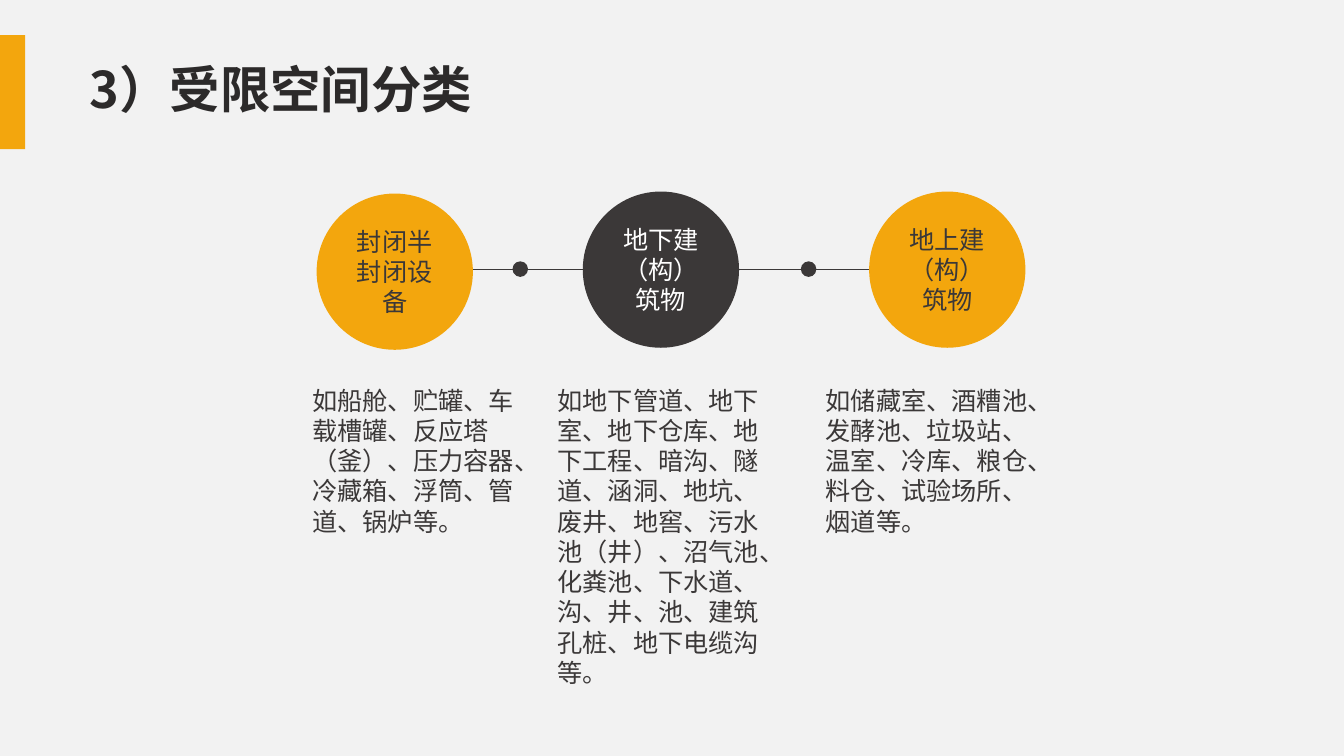
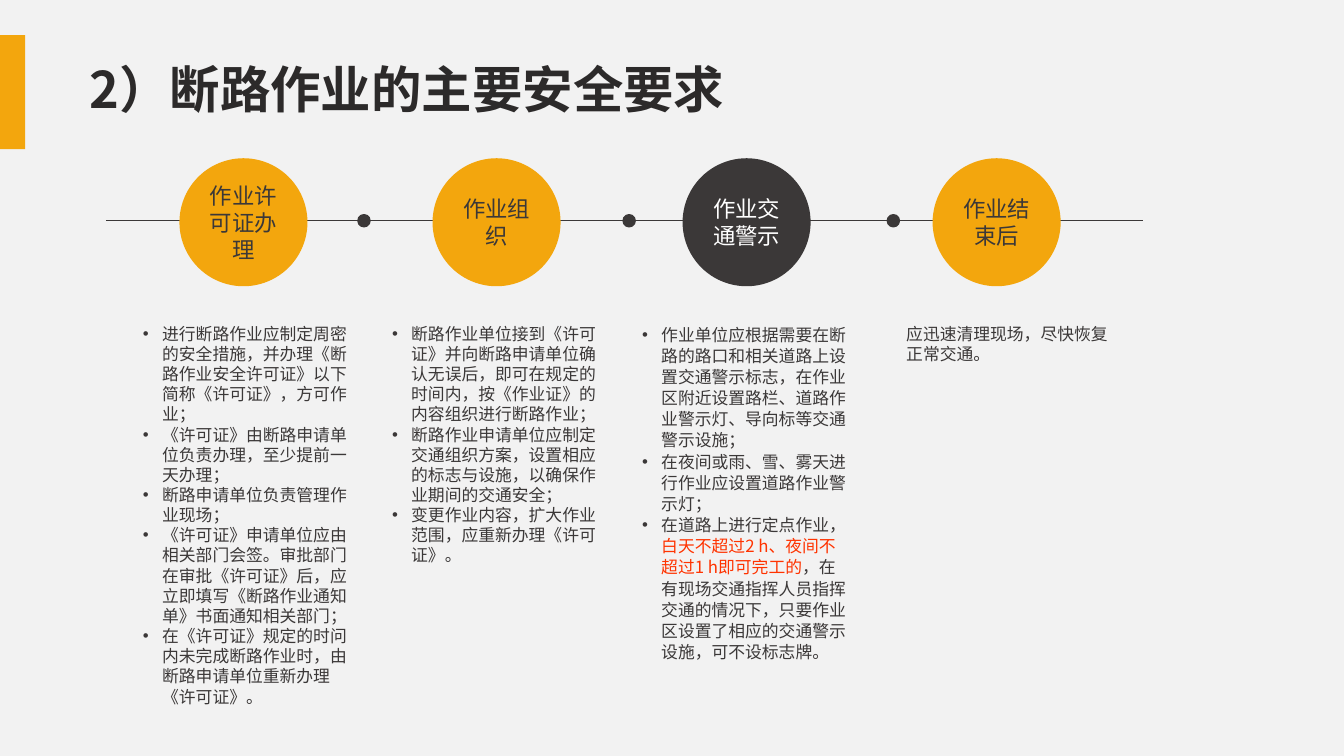
from dataclasses import dataclass

from lxml import etree
from pptx import Presentation
from pptx.dml.color import RGBColor
from pptx.enum.shapes import MSO_CONNECTOR, MSO_SHAPE
from pptx.enum.text import MSO_ANCHOR, PP_ALIGN
from pptx.oxml.ns import qn
from pptx.util import Inches, Pt

RECT, OVAL = MSO_SHAPE.RECTANGLE, MSO_SHAPE.OVAL
STRAIGHT = MSO_CONNECTOR.STRAIGHT
MIDDLE, TOP = MSO_ANCHOR.MIDDLE, MSO_ANCHOR.TOP
CENTER = PP_ALIGN.CENTER

# Shared style
FONT = "Noto Sans CJK SC"
PAPER = RGBColor(0xF2, 0xF2, 0xF2)
AMBER = RGBColor(0xF3, 0xA6, 0x0D)
DARK = RGBColor(0x3B, 0x38, 0x38)
TITLE = RGBColor(0x2C, 0x2A, 0x2A)
RED = RGBColor(0xFF, 0x33, 0x00)
WHITE = RGBColor(0xFF, 0xFF, 0xFF)
INDENT = Inches(0.19)


@dataclass
class Step:
    """One circle with the text column below it."""
    label: str
    circle: tuple  # left, top
    column: tuple  # left, top, width, height
    paragraphs: list  # strings, or tuples whose odd parts are highlighted
    dark: bool = False
    bullets: bool = False
    spacing: float = 1.0


@dataclass
class Timeline:
    """Axis, dots and sizes common to the steps of a slide."""
    axis: tuple  # left, right, y
    dots: list  # left edges
    dot_size: float
    circle_size: float
    label_size: int
    body_size: int
    steps: list


def format_run(r, size, color, bold=False):
    r.font.size, r.font.bold = Pt(size), bold
    r.font.color.rgb = color
    r.font.name = FONT
    etree.SubElement(r.font._element, qn("a:ea")).set("typeface", FONT)


def add_bullet(p):
    pPr = p._p.get_or_add_pPr()
    pPr.set("marL", str(INDENT))
    pPr.set("indent", str(-INDENT))
    etree.SubElement(pPr, qn("a:buFont")).set("typeface", "Arial")
    etree.SubElement(pPr, qn("a:buChar")).set("char", "•")


def add_filled(slide, kind, box, fill, line=None):
    sp = slide.shapes.add_shape(kind, *map(Inches, box))
    sp.shadow.inherit = False
    sp.fill.solid()
    sp.fill.fore_color.rgb = fill
    if line is None:
        sp.line.fill.background()
    else:
        sp.line.color.rgb = line
        sp.line.width = Pt(1)
    return sp


def add_text_box(slide, box, anchor):
    tf = slide.shapes.add_textbox(*map(Inches, box)).text_frame
    tf.word_wrap = True
    tf.vertical_anchor = anchor
    return tf


def add_base(prs, title):
    """Blank slide with background, title and side band."""
    slide = prs.slides.add_slide(prs.slide_layouts[6])
    slide.background.fill.solid()
    slide.background.fill.fore_color.rgb = PAPER
    add_filled(slide, RECT, (-0.01, 0.35, 0.26, 1.13), AMBER)
    p = add_text_box(slide, (0.79, 0.4, 8.75, 1.02), MIDDLE).paragraphs[0]
    p.text = title
    p.line_spacing = 0.9
    format_run(p.runs[0], 36, TITLE, bold=True)
    return slide


def add_axis(slide, timeline):
    left, right, y = timeline.axis
    line = slide.shapes.add_connector(
        STRAIGHT, Inches(left), Inches(y), Inches(right), Inches(y))
    line.line.color.rgb = DARK
    line.line.width = Pt(0.5)
    etree.SubElement(line._element.spPr, qn("a:effectLst"))
    d = timeline.dot_size
    for x in timeline.dots:
        add_filled(slide, OVAL, (x, y - d / 2, d, d), DARK, DARK)


def add_circle(slide, step, diameter, size):
    fill, color = (DARK, WHITE) if step.dark else (AMBER, DARK)
    sp = add_filled(slide, OVAL, (*step.circle, diameter, diameter), fill)
    tf = sp.text_frame
    tf.word_wrap = True
    tf.vertical_anchor = MIDDLE
    p = tf.paragraphs[0]
    p.text = step.label
    p.alignment = CENTER
    format_run(p.runs[0], size, color)


def add_column(slide, step, size):
    tf = add_text_box(slide, step.column, TOP)
    for i, content in enumerate(step.paragraphs):
        p = tf.add_paragraph() if i else tf.paragraphs[0]
        p.line_spacing = step.spacing
        if step.bullets:
            add_bullet(p)
        parts = (content,) if isinstance(content, str) else content
        for j, part in enumerate(parts):
            r = p.add_run()
            r.text = part
            format_run(r, size, RED if j % 2 else DARK)


def add_timeline_slide(prs, title, timeline):
    slide = add_base(prs, title)
    add_axis(slide, timeline)
    for step in timeline.steps:
        add_circle(slide, step, timeline.circle_size, timeline.label_size)
        add_column(slide, step, timeline.body_size)


SPACE_TYPES = Timeline(
    axis=(3.17, 10.17, 2.67), dots=[5.09, 7.95], dot_size=0.14,
    circle_size=1.55, label_size=18, body_size=18,
    steps=[
        Step("封闭半封闭设备", (3.14, 1.92), (3, 3.77, 2.24, 2.97),
             ["如船舱、贮罐、车载槽罐、反应塔（釜）、压力容器、冷藏箱、浮筒、管道、锅炉等。"]),
        Step("地下建（构）筑物", (5.78, 1.9), (5.43, 3.77, 2.25, 2.97),
             ["如地下管道、地下室、地下仓库、地下工程、暗沟、隧道、涵洞、地坑、废井、地窖、"
              "污水池（井）、沼气池、化粪池、下水道、沟、井、池、建筑孔桩、地下电缆沟等。"],
             dark=True),
        Step("地上建（构）筑物", (8.62, 1.9), (8.09, 3.77, 2.22, 2.97),
             ["如储藏室、酒糟池、发酵池、垃圾站、温室、冷库、粮仓、料仓、试验场所、烟道等。"]),
    ])

ROAD_WORK = Timeline(
    axis=(1.05, 11.34, 2.19), dots=[3.55, 6.18, 8.8], dot_size=0.12,
    circle_size=1.27, label_size=16, body_size=12,
    steps=[
        Step("作业许可证办理", (1.78, 1.57), (1.32, 3.16, 2.27, 3.87),
             ["进行断路作业应制定周密的安全措施，并办理《断路作业安全许可证》以下简称《许可证》，方可作业；",
              "《许可证》由断路申请单位负责办理，至少提前一天办理；",
              "断路申请单位负责管理作业现场；",
              "《许可证》申请单位应由相关部门会签。审批部门在审批《许可证》后，"
              "应立即填写《断路作业通知单》书面通知相关部门；",
              "在《许可证》规定的时问内未完成断路作业时，由断路申请单位重新办理《许可证》。"],
             bullets=True),
        Step("作业组织", (4.29, 1.57), (3.79, 3.16, 2.27, 3.73),
             ["断路作业单位接到《许可证》并向断路申请单位确认无误后，即可在规定的时间内，"
              "按《作业证》的内容组织进行断路作业；",
              "断路作业申请单位应制定交通组织方案，设置相应的标志与设施，以确保作业期间的交通安全；",
              "变更作业内容，扩大作业范围，应重新办理《许可证》。"],
             bullets=True),
        Step("作业交通警示", (6.77, 1.57), (6.27, 3.16, 2.27, 3.73),
             ["作业单位应根据需要在断路的路口和相关道路上设置交通警示标志，"
              "在作业区附近设置路栏、道路作业警示灯、导向标等交通警示设施；",
              "在夜间或雨、雪、雾天进行作业应设置道路作业警示灯；",
              ("在道路上进行定点作业，", "白天不超过2 h、夜间不超过1 h即可完工的",
               "，在有现场交通指挥人员指挥交通的情况下，只要作业区设置了相应的交通警示设施，可不设标志牌。")],
             dark=True, bullets=True, spacing=1.05),
        Step("作业结束后", (9.25, 1.57), (8.89, 3.16, 2.27, 3.73),
             ["应迅速清理现场，尽快恢复正常交通。"]),
    ])


def main():
    prs = Presentation()
    prs.slide_width, prs.slide_height = Inches(13.33), Inches(7.5)
    add_timeline_slide(prs, "3）受限空间分类", SPACE_TYPES)
    add_timeline_slide(prs, "2）断路作业的主要安全要求", ROAD_WORK)
    prs.save("out.pptx")


if __name__ == "__main__":
    main()
